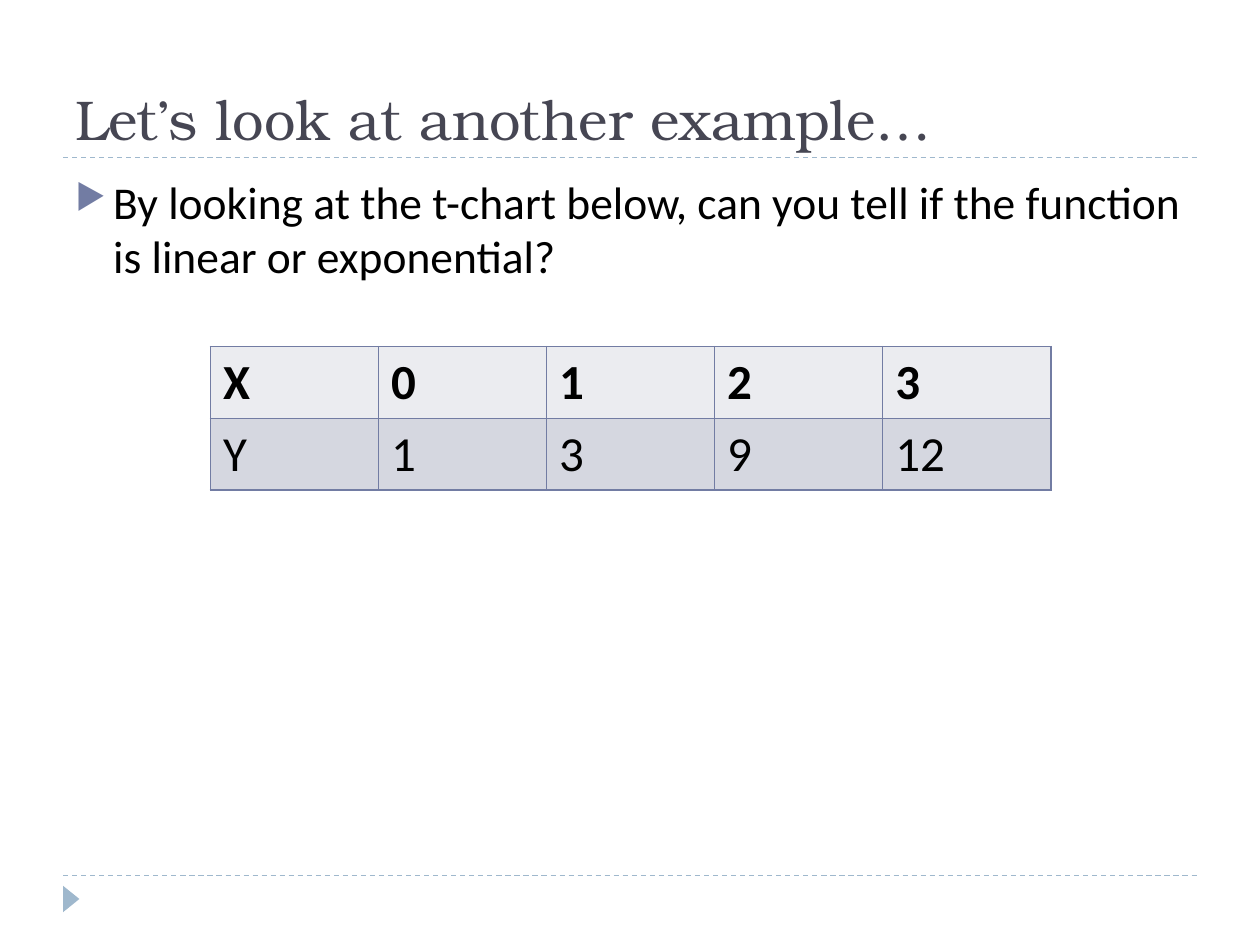
from pptx import Presentation
from pptx.dml.color import RGBColor
from pptx.enum import dml, shapes, text
from pptx.oxml import parse_xml
from pptx.oxml.ns import nsdecls
from pptx.oxml.xmlchemy import OxmlElement
from pptx.util import Inches, Pt

INK = RGBColor(0x00, 0x00, 0x00)
SLATE = RGBColor(0x46, 0x46, 0x53)
BLUE = RGBColor(0x72, 0x7C, 0xA3)
PALE = RGBColor(0x9F, 0xB8, 0xCD)
BANDS = [RGBColor(0xEB, 0xEC, 0xF0), RGBColor(0xD5, 0xD7, 0xE0)]

ROWS = [["X", "0", "1", "2", "3"], ["Y", "1", "3", "9", "12"]]


def write(frame, words, size, font="Calibri", color=INK, bold=False,
          anchor=text.MSO_ANCHOR.TOP):
    frame.word_wrap = True
    frame.vertical_anchor = anchor
    para = frame.paragraphs[0]
    run = para.add_run()
    run.text = words
    run.font.size = Pt(size)
    run.font.name = font
    run.font.bold = bold
    run.font.color.rgb = color
    return para


def add_bullet(para, mark, indent):
    props = para._p.get_or_add_pPr()
    props.set("marL", str(indent))
    props.set("indent", str(-indent))
    for xml in (
        f'<a:buClr {nsdecls("a")}><a:srgbClr val="{BLUE}"/></a:buClr>',
        f'<a:buSzPct {nsdecls("a")} val="76000"/>',
        f'<a:buChar {nsdecls("a")} char="{mark}"/>',
    ):
        props.append(parse_xml(xml))


def add_rule(slide, left, top, width):
    rule = slide.shapes.add_connector(
        shapes.MSO_CONNECTOR.STRAIGHT, left, top, left + width, top)
    rule.line.color.rgb = PALE
    rule.line.width = Pt(0.75)
    rule.line.dash_style = dml.MSO_LINE.DASH
    rule._element.spPr.append(OxmlElement("a:effectLst"))


def add_title(slide, left, top, width, height):
    box = slide.shapes.add_textbox(left, top, width, height)
    write(box.text_frame, "Let’s look at another example…", 32,
          font="TeX Gyre Bonum", color=SLATE, anchor=text.MSO_ANCHOR.BOTTOM)
    add_rule(slide, left, top + height, width)


def add_body(slide, left, top, width, height):
    box = slide.shapes.add_textbox(left, top, width, height)
    para = write(box.text_frame, "By looking at the t-chart below, can you "
                 "tell if the function is linear or exponential?", 26)
    para.space_before = Pt(6)
    add_bullet(para, "▶", Inches(0.3))


def edge_cell(cell):
    props = cell._tc.get_or_add_tcPr()
    for spot, side in enumerate(("lnL", "lnR", "lnT", "lnB")):
        props.insert(spot, parse_xml(
            f'<a:{side} {nsdecls("a")} w="{Pt(1)}"><a:solidFill>'
            f'<a:srgbClr val="{BLUE}"/></a:solidFill></a:{side}>'))


def add_chart_table(slide, left, top, width, height):
    grid = slide.shapes.add_table(
        len(ROWS), len(ROWS[0]), left, top, width, height).table
    for r, row in enumerate(ROWS):
        for c, words in enumerate(row):
            cell = grid.cell(r, c)
            cell.fill.solid()
            cell.fill.fore_color.rgb = BANDS[r]
            edge_cell(cell)
            write(cell.text_frame, words, 28, bold=r == 0)


def add_footer(slide, left, top, width):
    add_rule(slide, left, top, width)
    # Small arrowhead pointing right
    mark = slide.shapes.add_shape(
        shapes.MSO_SHAPE.ISOSCELES_TRIANGLE, left - Inches(0.04),
        top + Inches(0.12), Inches(0.21), Inches(0.13))
    mark.rotation = 90
    mark.shadow.inherit = False
    mark.fill.solid()
    mark.fill.fore_color.rgb = PALE
    mark.line.fill.background()


def main():
    deck = Presentation()
    deck.slide_width, deck.slide_height = Inches(10), Inches(7.5)
    slide = deck.slides.add_slide(deck.slide_layouts[6])
    left, width = Inches(0.5), Inches(9)
    add_footer(slide, left, Inches(6.95), width)
    add_title(slide, left, Inches(0.17), width, Inches(1.08))
    add_body(slide, left, Inches(1.33), width, Inches(5.4))
    add_chart_table(slide, Inches(1.67), Inches(2.75), Inches(6.67), Inches(1.14))
    deck.save("out.pptx")


if __name__ == "__main__":
    main()
